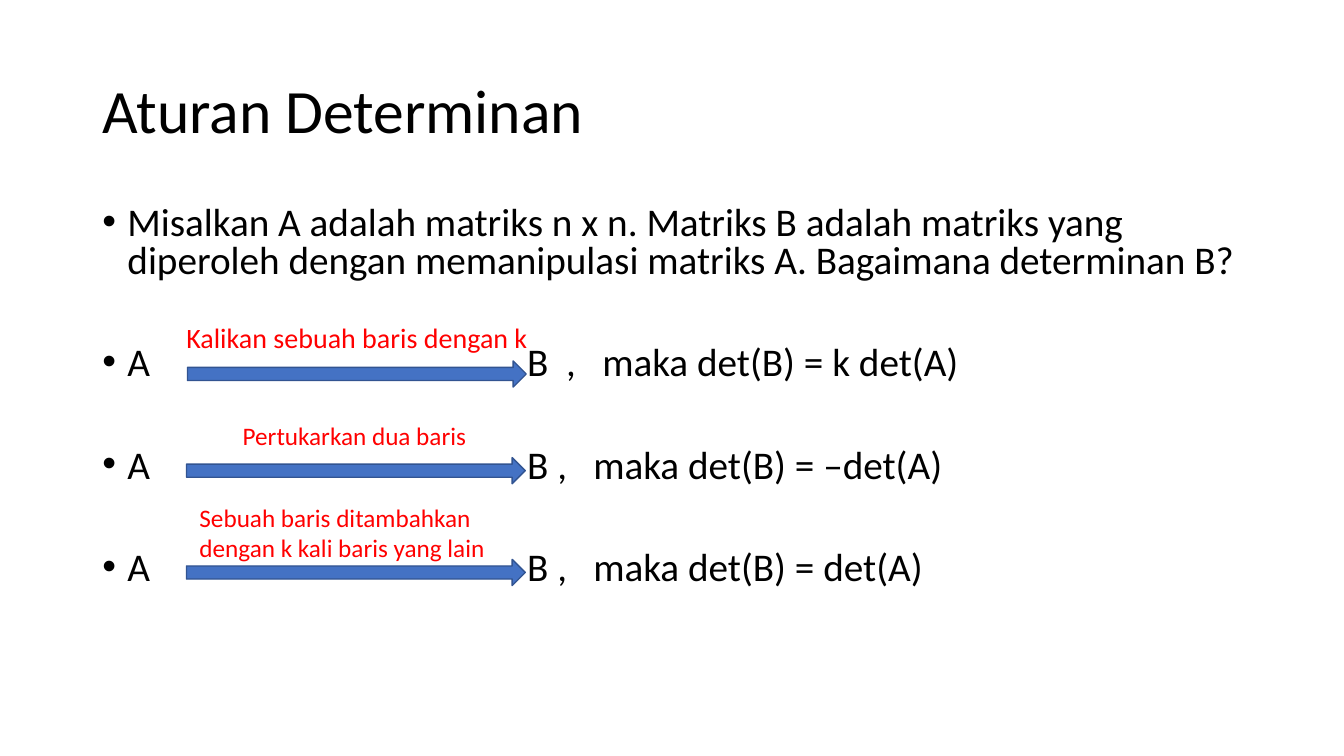
from pptx import Presentation
from pptx.dml.color import RGBColor
from pptx.enum.shapes import MSO_SHAPE
from pptx.enum.text import MSO_ANCHOR, MSO_AUTO_SIZE, PP_ALIGN
from pptx.oxml import parse_xml
from pptx.oxml.ns import nsdecls
from pptx.util import Pt

ARROW = MSO_SHAPE.RIGHT_ARROW
MIDDLE, TOP = MSO_ANCHOR.MIDDLE, MSO_ANCHOR.TOP
GROW, FIXED = MSO_AUTO_SIZE.SHAPE_TO_FIT_TEXT, MSO_AUTO_SIZE.NONE
LEFT = PP_ALIGN.LEFT


class Theme:
    font = "Calibri"
    ink = RGBColor(0x00, 0x00, 0x00)
    red = RGBColor(0xFF, 0x00, 0x00)
    blue = RGBColor(0x44, 0x72, 0xC4)
    edge = RGBColor(0x32, 0x54, 0x91)
    title, body, label, small = 44, 28, 20, 18


def apply(item, values):
    for name, value in values.items():
        setattr(item, name, value)


class Painter:
    def __init__(self, slide, theme):
        self.slide, self.theme = slide, theme

    def style(self, para, size, color, **values):
        apply(para, {"alignment": LEFT, **values})
        apply(para.font, {"name": self.theme.font, "size": Pt(size), "bold": False})
        para.font.color.rgb = color

    def title(self, text, box):
        shape = self.slide.shapes.title
        apply(shape, dict(zip(("left", "top", "width", "height"), map(Pt, box))))
        frame = shape.text_frame
        frame.text = text
        apply(frame, {"vertical_anchor": MIDDLE, "word_wrap": True, "auto_size": FIXED})
        self.style(frame.paragraphs[0], self.theme.title, self.theme.ink, line_spacing=0.9)

    def text(self, lines, box, wrap):
        frame = self.slide.shapes.add_textbox(*map(Pt, box)).text_frame
        apply(frame, {"word_wrap": wrap, "auto_size": FIXED if wrap else GROW,
                      "vertical_anchor": TOP})
        frame.text = "\n".join(lines)
        return frame.paragraphs

    def label(self, lines, box, size):
        for para in self.text(lines, box, False):
            self.style(para, size, self.theme.red)

    def bullets(self, lines, stops, box, gap):
        paras = self.text(lines, box, True)
        for i, (para, tabs) in enumerate(zip(paras, stops)):
            props = para._p.get_or_add_pPr()
            props.set("marL", str(Pt(18)))
            props.set("indent", str(Pt(-18)))
            props.append(parse_xml(f'<a:buFont {nsdecls("a")} typeface="Arial"/>'))
            props.append(parse_xml(f'<a:buChar {nsdecls("a")} char="•"/>'))
            if tabs:
                marks = "".join(f'<a:tab pos="{Pt(x)}" algn="l"/>' for x in tabs)
                props.append(parse_xml(f'<a:tabLst {nsdecls("a")}>{marks}</a:tabLst>'))
            self.style(para, self.theme.body, self.theme.ink, line_spacing=0.8,
                       space_before=Pt(gap if i else 0))

    def arrow(self, left, top):
        shape = self.slide.shapes.add_shape(ARROW, Pt(left), Pt(top), Pt(242), Pt(18.7))
        shape.shadow.inherit = False
        shape.fill.solid()
        shape.fill.fore_color.rgb = self.theme.blue
        shape.line.color.rgb = self.theme.edge
        shape.line.width = Pt(1)


def main():
    deck = Presentation()
    apply(deck, {"slide_width": Pt(960), "slide_height": Pt(540)})
    theme = Theme()
    pen = Painter(deck.slides.add_slide(deck.slide_layouts[5]), theme)

    # Title
    pen.title("Aturan Determinan", (66, 28.8, 828, 104.4))

    # Question and rules: result, tab stops for B, the comma and the result
    intro = ("Misalkan A adalah matriks n x n. Matriks B adalah matriks yang "
             "diperoleh dengan memanipulasi matriks A. Bagaimana determinan B?")
    wide, tight = (303.4, 331.3, 357.2), (303.4, 325, 350.8)
    rules = [("k det(A)", wide), ("–det(A)", tight), ("det(A)", tight)]
    lines = [intro] + [f"A\tB\t,\tmaka det(B) = {end}" for end, _ in rules]
    stops = [()] + [tabs for _, tabs in rules]
    pen.bullets(lines, stops, (66, 144, 828, 342.7), 46.3)

    # Row operations: arrow place, label lines, label box, label size
    steps = [
        ((133.9, 257.8), ["Kalikan sebuah baris dengan k"],
         (126, 225.4, 260.6, 31.5), theme.label),
        ((133.2, 326.9), ["Pertukarkan dua baris"],
         (166.3, 296.6, 175.7, 29), theme.small),
        ((133.2, 399.6), ["Sebuah baris ditambahkan", "dengan k kali baris yang lain"],
         (135.4, 355, 220.3, 51), theme.small),
    ]
    for place, words, box, size in steps:
        pen.arrow(*place)
        pen.label(words, box, size)

    deck.save("out.pptx")


if __name__ == "__main__":
    main()
